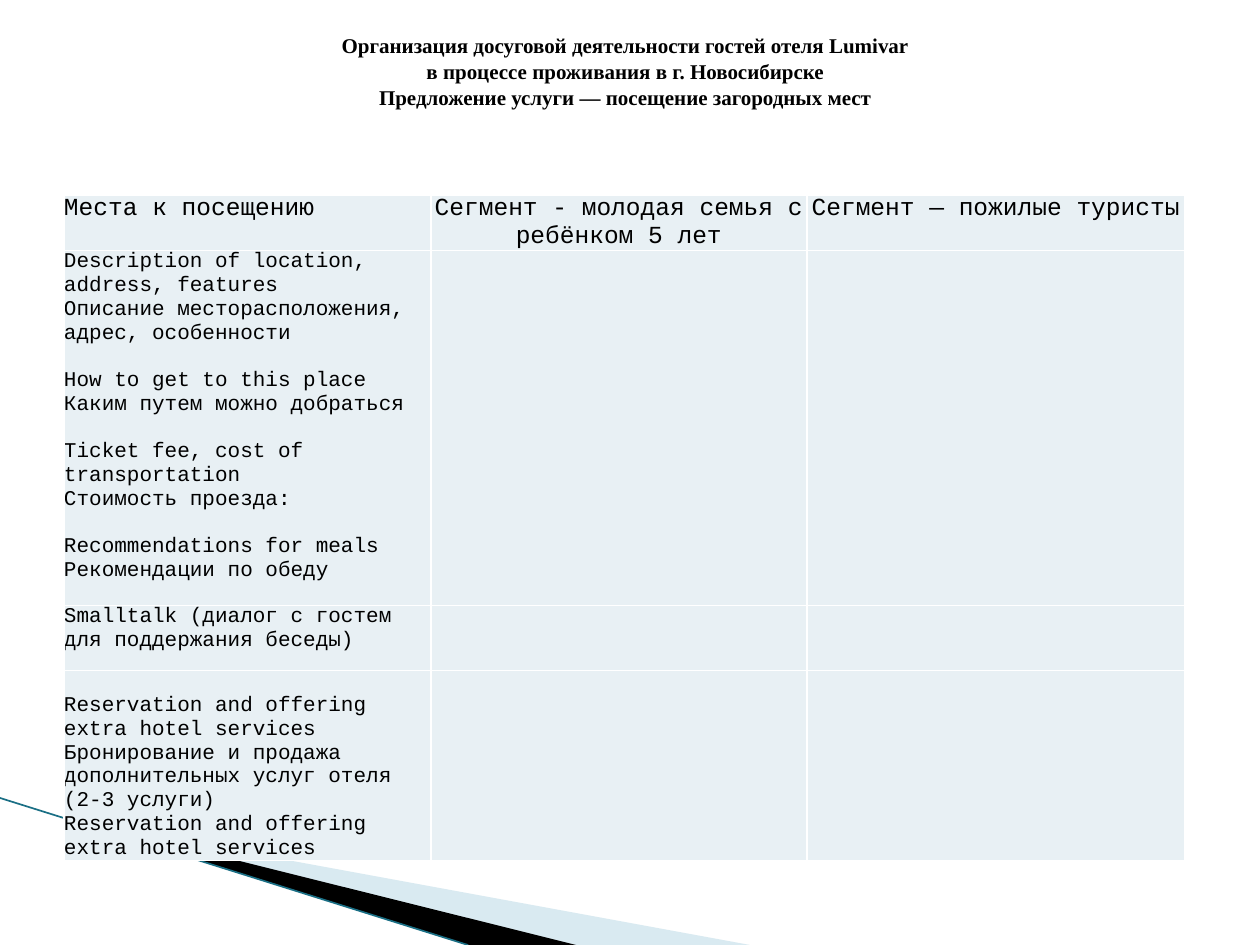
from dataclasses import dataclass

import lxml.etree
import pptx
import pptx.dml.color
import pptx.enum.dml
import pptx.enum.text
import pptx.oxml
import pptx.oxml.ns
import pptx.util

EMU_PER_PX = 914400 / 126
BLACK = pptx.dml.color.RGBColor(0x00, 0x00, 0x00)
WHITE = pptx.dml.color.RGBColor(0xFF, 0xFF, 0xFF)
PALE_BLUE = pptx.dml.color.RGBColor(0xA0, 0xCB, 0xDC)
TEAL = pptx.dml.color.RGBColor(0x1A, 0x6F, 0x85)
CELL_FILL = pptx.dml.color.RGBColor(0xE8, 0xF0, 0xF4)
CENTER = pptx.enum.text.PP_ALIGN.CENTER
LEFT = pptx.enum.text.PP_ALIGN.LEFT
BODY_LINE = 13.6


@dataclass(frozen=True)
class Wedge:
    points: tuple[tuple[int, int], ...]
    color: pptx.dml.color.RGBColor
    opacity: int = 100


@dataclass(frozen=True)
class CellText:
    groups: tuple[tuple[str, ...], ...]
    size: int = 12
    align: pptx.enum.text.PP_ALIGN = LEFT
    top: int = 0


WEDGES = (
    Wedge(((69, 820), (750, 945), (575, 945), (69, 819)), PALE_BLUE, 40),
    Wedge(((67, 818), (576, 945), (469, 945), (68, 819)), BLACK),
)
TITLE = (
    "Организация досуговой деятельности гостей отеля Lumivar",
    "в процессе проживания в г. Новосибирске",
    "Предложение услуги — посещение загородных мест",
)
EXTRA_SERVICES = "Reservation and offering extra hotel services"
COLUMN_WIDTHS = (367, 376, 378)
ROW_HEIGHTS = (55, 355, 65, 190)
CELLS = {
    (0, 0): CellText((("Места к посещению",),), 14),
    (0, 1): CellText((("Сегмент - молодая семья с ребёнком 5 лет",),), 14, CENTER),
    (0, 2): CellText((("Сегмент — пожилые туристы",),), 14, CENTER),
    (1, 0): CellText((
        ("Description of location, address, features",
         "Описание месторасположения, адрес, особенности"),
        ("How to get to this place", "Каким путем можно добраться"),
        ("Ticket fee, cost of transportation", "Стоимость проезда:"),
        ("Recommendations for meals", "Рекомендации по обеду"),
    )),
    (2, 0): CellText((("Smalltalk (диалог с гостем для поддержания беседы)",),)),
    (3, 0): CellText(((
        EXTRA_SERVICES,
        "Бронирование и продажа дополнительных услуг отеля (2-3 услуги)",
        EXTRA_SERVICES,
    ),), top=24),
}


def px(length: int) -> int:
    return round(length * EMU_PER_PX)


def draw_wedge(slide, wedge: Wedge) -> None:
    builder = slide.shapes.build_freeform(*wedge.points[0], scale=EMU_PER_PX)
    builder.add_line_segments(wedge.points[1:], close=True)
    shape = builder.convert_to_shape()
    shape.shadow.inherit = False
    shape.fill.solid()
    shape.fill.fore_color.rgb = wedge.color
    shape.line.fill.background()
    if wedge.opacity < 100:
        color = shape.fill._xPr.find(".//" + pptx.oxml.ns.qn("a:srgbClr"))
        alpha = lxml.etree.SubElement(color, pptx.oxml.ns.qn("a:alpha"))
        alpha.set("val", str(wedge.opacity * 1000))


def draw_edge(slide) -> None:
    edge = slide.shapes.add_connector(
        pptx.enum.shapes.MSO_CONNECTOR.STRAIGHT, 0, px(798), px(468), px(945))
    edge.line.color.rgb = TEAL
    edge.line.width = pptx.util.Pt(0.95)
    lxml.etree.SubElement(edge._element.spPr, pptx.oxml.ns.qn("a:effectLst"))


def format_font(paragraph, name: str, size: int, bold: bool) -> None:
    for run in paragraph.runs:
        run.font.name = name
        run.font.size = pptx.util.Pt(size)
        run.font.bold = bold
        run.font.color.rgb = BLACK


def draw_title(slide) -> None:
    title = slide.shapes.add_textbox(px(3), px(26), px(1245), px(90))
    frame = title.text_frame
    frame.word_wrap = True
    frame.vertical_anchor = pptx.enum.text.MSO_ANCHOR.MIDDLE
    frame.text = "\n".join(TITLE)
    for paragraph in frame.paragraphs:
        paragraph.alignment = CENTER
        paragraph.line_spacing = pptx.util.Pt(14.6)
        format_font(paragraph, "Times New Roman", 12, True)


def style_cell(cell) -> None:
    cell.margin_left = cell.margin_right = cell.margin_top = cell.margin_bottom = 0
    properties = cell._tc.get_or_add_tcPr()
    for side in ("lnL", "lnR", "lnT", "lnB"):
        border = lxml.etree.SubElement(properties, pptx.oxml.ns.qn("a:" + side), w="12700")
        solid = lxml.etree.SubElement(border, pptx.oxml.ns.qn("a:solidFill"))
        lxml.etree.SubElement(solid, pptx.oxml.ns.qn("a:srgbClr"), val=str(WHITE))
    cell.fill.solid()
    cell.fill.fore_color.rgb = CELL_FILL


def write_cell(cell, content: CellText) -> None:
    cell.margin_top = px(content.top)
    frame = cell.text_frame
    frame.text = "\n".join(line for group in content.groups for line in group)
    group_starts = {sum(map(len, content.groups[:i])) for i in range(1, len(content.groups))}
    for index, paragraph in enumerate(frame.paragraphs):
        paragraph.alignment = content.align
        if index in group_starts:
            paragraph.space_before = pptx.util.Pt(BODY_LINE)
        format_font(paragraph, "Courier New", content.size, False)


def draw_table(slide) -> None:
    plan = slide.shapes.add_table(
        len(ROW_HEIGHTS), len(COLUMN_WIDTHS), px(64), px(195),
        px(sum(COLUMN_WIDTHS)), px(sum(ROW_HEIGHTS))).table
    plan.first_row = False
    plan.horz_banding = False
    for column, width in zip(plan.columns, COLUMN_WIDTHS):
        column.width = px(width)
    for row, height in zip(plan.rows, ROW_HEIGHTS):
        row.height = px(height)
    for cell in plan.iter_cells():
        style_cell(cell)
    for position, content in CELLS.items():
        write_cell(plan.cell(*position), content)


def main() -> None:
    presentation = pptx.Presentation()
    presentation.slide_width = px(1260)
    presentation.slide_height = px(945)
    slide = presentation.slides.add_slide(presentation.slide_layouts[6])
    for wedge in WEDGES:
        draw_wedge(slide, wedge)
    draw_edge(slide)
    draw_table(slide)
    draw_title(slide)
    presentation.save("out.pptx")


if __name__ == "__main__":
    main()
